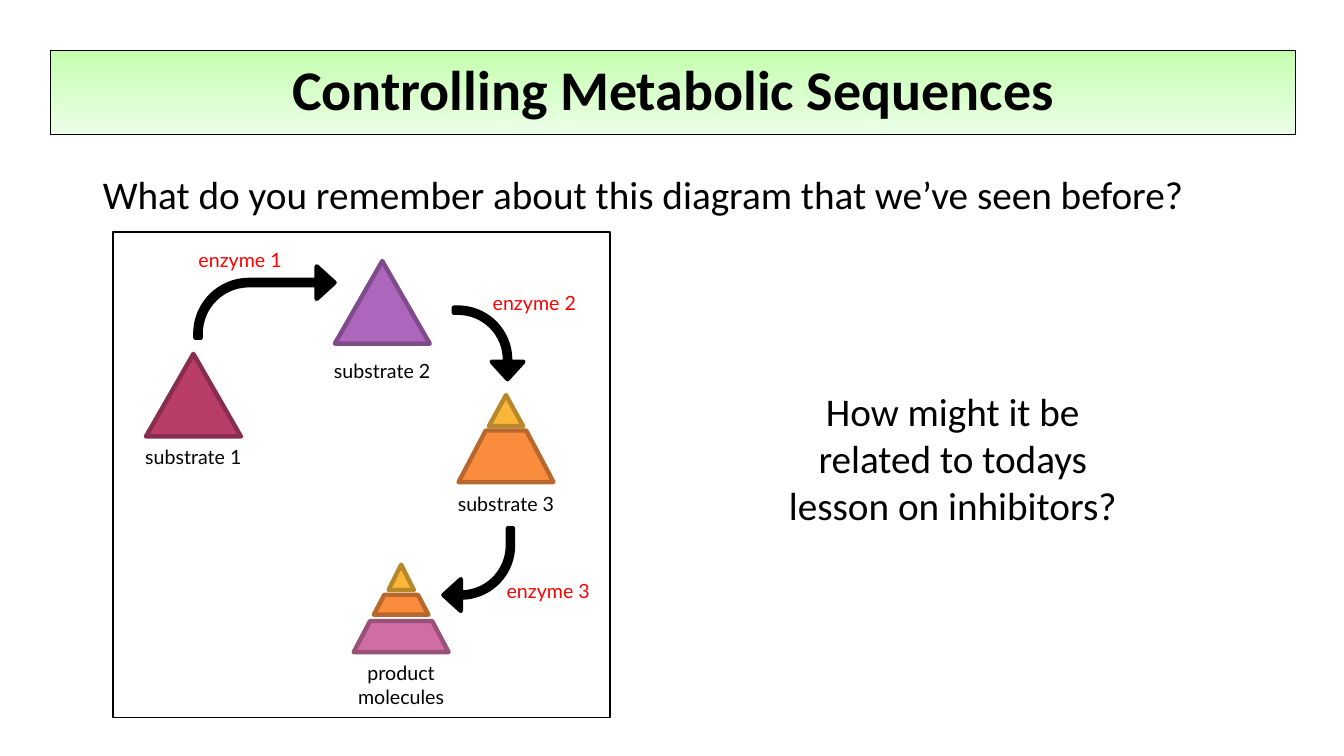
from dataclasses import dataclass

import pptx
import pptx.dml.color
import pptx.enum.shapes
import pptx.enum.text
import pptx.oxml
import pptx.oxml.ns
import pptx.util

SHAPES = pptx.enum.shapes.MSO_SHAPE
ALIGN = pptx.enum.text.PP_ALIGN
ANCHOR = pptx.enum.text.MSO_ANCHOR
SLIDE_WIDTH, SLIDE_HEIGHT = 13.33, 7.5


@dataclass(frozen=True)
class Theme:
    heading_font: str = "Calibri"
    label_font: str = "Lato"
    title_size: float = 40
    body_size: float = 28
    label_size: float = 14
    outline: float = 3.15
    black: str = "000000"
    white: str = "FFFFFF"
    enzyme: str = "FF0000"
    banner_top: str = "C4FFAF"
    banner_bottom: str = "ECFFE7"
    crimson: str = "B83D68"
    purple: str = "AC66BB"
    yellow: str = "F9B639"
    orange: str = "FA8D3D"
    pink: str = "CF6DA4"


THEME = Theme()


@dataclass(frozen=True)
class Box:
    """A rectangle in inches."""
    left: float
    top: float
    width: float
    height: float

    def inner(self, left, top, width, height):
        """Return the inner box given in hundredths of this one."""
        return Box(self.left + self.width * left / 100, self.top + self.height * top / 100,
                   self.width * width / 100, self.height * height / 100)

    def lengths(self):
        return [pptx.util.Inches(n) for n in (self.left, self.top, self.width, self.height)]


# Molecule layers: preset, width, offset from the molecule's top, height, colour
FULL_WIDTH = 19.1
MOLECULES = [  # name, centre, top, label top, label height, layers
    ("substrate 1", 16.2, 25.1, 42.9, 7,
     [(SHAPES.ISOSCELES_TRIANGLE, FULL_WIDTH, 0, 17, THEME.crimson)]),
    ("substrate 2", 54.2, 6, 25.1, 7,
     [(SHAPES.ISOSCELES_TRIANGLE, FULL_WIDTH, 0, 17, THEME.purple)]),
    ("substrate 3", 79.1, 33.6, 52.5, 7,
     [(SHAPES.ISOSCELES_TRIANGLE, 6.9, 0, 6.4, THEME.yellow),
      (SHAPES.TRAPEZOID, FULL_WIDTH, 7.3, 10.6, THEME.orange)]),
    ("product molecules", 58, 68.5, 87.3, 11.8,
     [(SHAPES.ISOSCELES_TRIANGLE, 5.1, 0, 5.2, THEME.yellow),
      (SHAPES.TRAPEZOID, 11, 6.2, 4.1, THEME.orange),
      (SHAPES.TRAPEZOID, FULL_WIDTH, 11.6, 6.4, THEME.pink)]),
]
ENZYMES = [  # name, label centre, label top, arrow place, arrow rotation
    ("enzyme 1", 25.6, 2.3, (16.6, 7.1, 28, 14.7), 0),
    ("enzyme 2", 84.8, 11.2, (68.4, 15.8, 14.4, 14.3), 90),
    ("enzyme 3", 87.6, 70.5, (66.5, 61, 14, 17), 180),
]
ADJUSTMENTS = {SHAPES.TRAPEZOID: [0.528], SHAPES.BENT_ARROW: [0.074, 0.228, 0.25, 0.75]}


def color(value):
    return pptx.dml.color.RGBColor.from_string(value)


def darker(value):
    return "".join(f"{round(int(value[i:i + 2], 16) * 0.74):02X}" for i in (0, 2, 4))


def write(shape, text, font, size, ink=THEME.black, align=ALIGN.CENTER, bold=False):
    frame = shape.text_frame
    frame.word_wrap = True
    frame.auto_size = pptx.enum.text.MSO_AUTO_SIZE.NONE
    frame.text = text
    para = frame.paragraphs[0]
    para.alignment = align
    for span in para.runs:
        span.font.name, span.font.size, span.font.bold = font, pptx.util.Pt(size), bold
        span.font.color.rgb = color(ink)
    return para


def place(shape, box):
    shape.left, shape.top, shape.width, shape.height = box.lengths()


def add_figure(shapes, preset, box, fill, line, weight):
    shape = shapes.add_shape(preset, *box.lengths())
    shape.shadow.inherit = False
    for index, value in enumerate(ADJUSTMENTS.get(preset, [])):
        shape.adjustments[index] = value
    shape.fill.solid()
    shape.fill.fore_color.rgb = color(fill)
    shape.line.color.rgb = color(line)
    shape.line.width = pptx.util.Pt(weight)
    if weight == THEME.outline:
        shape.line._get_or_add_ln().append(pptx.oxml.parse_xml(
            f'<a:round {pptx.oxml.ns.nsdecls("a")}/>'))
    return shape


def add_label(shapes, text, box, ink=THEME.black):
    write(shapes.add_textbox(*box.lengths()), text, THEME.label_font, THEME.label_size, ink)


def fill_banner(title, box):
    place(title, box)
    para = write(title, "Controlling Metabolic Sequences", THEME.heading_font,
                 THEME.title_size, bold=True)
    para.line_spacing = 0.9
    title.text_frame.vertical_anchor = ANCHOR.MIDDLE
    title.fill.gradient()
    title.fill.gradient_angle = 270
    for stop, value in zip(title.fill.gradient_stops, (THEME.banner_top, THEME.banner_bottom)):
        stop.color.rgb = color(value)
    title.line.color.rgb = color(THEME.black)
    title.line.width = pptx.util.Pt(0.75)


def fill_question(body, box):
    place(body, box)
    para = write(body, "What do you remember about this diagram that we’ve seen before?",
                 THEME.heading_font, THEME.body_size, align=ALIGN.LEFT)
    para.line_spacing = 0.9
    para.space_before = pptx.util.Pt(10)
    properties = para._p.get_or_add_pPr()
    properties.set("marL", "0")
    properties.set("indent", "0")
    properties.append(pptx.oxml.parse_xml(f'<a:buNone {pptx.oxml.ns.nsdecls("a")}/>'))


def add_pathway(page, box):
    """Draw the framed enzyme pathway as one group."""
    shapes = page.shapes.add_group_shape().shapes
    add_figure(shapes, SHAPES.RECTANGLE, box, THEME.white, THEME.black, 1)
    for name, centre, top, label_top, label_height, layers in MOLECULES:
        for preset, width, offset, height, fill in layers:
            layer = box.inner(centre - width / 2, top + offset, width, height)
            add_figure(shapes, preset, layer, fill, darker(fill), THEME.outline)
        add_label(shapes, name, box.inner(centre - 12.5, label_top, 25, label_height))
    for name, centre, top, arrow_place, rotation in ENZYMES:
        arrow = add_figure(shapes, SHAPES.BENT_ARROW, box.inner(*arrow_place),
                           THEME.black, THEME.black, THEME.outline)
        arrow.rotation = rotation
        add_label(shapes, name, box.inner(centre - 12, top, 24, 7), THEME.enzyme)


def add_prompt(page, box):
    prompt = page.shapes.add_textbox(*box.lengths())
    write(prompt, "How might it be related to todays lesson on inhibitors?",
          THEME.heading_font, THEME.body_size)
    prompt.text_frame.vertical_anchor = ANCHOR.MIDDLE


def main():
    deck = pptx.Presentation()
    deck.slide_width = pptx.util.Inches(SLIDE_WIDTH)
    deck.slide_height = pptx.util.Inches(SLIDE_HEIGHT)
    page = deck.slides.add_slide(deck.slide_layouts[1])
    slide_box = Box(0, 0, SLIDE_WIDTH, SLIDE_HEIGHT)
    fill_banner(page.shapes.title, slide_box.inner(3.75, 6.67, 92.65, 11.1))
    fill_question(page.placeholders[1], slide_box.inner(6.9, 22.53, 86.25, 67.47))
    add_pathway(page, slide_box.inner(8.4, 30.67, 36.98, 64.27))
    add_prompt(page, slide_box.inner(56.71, 50.53, 28.36, 20.13))
    deck.save("out.pptx")


if __name__ == "__main__":
    main()
